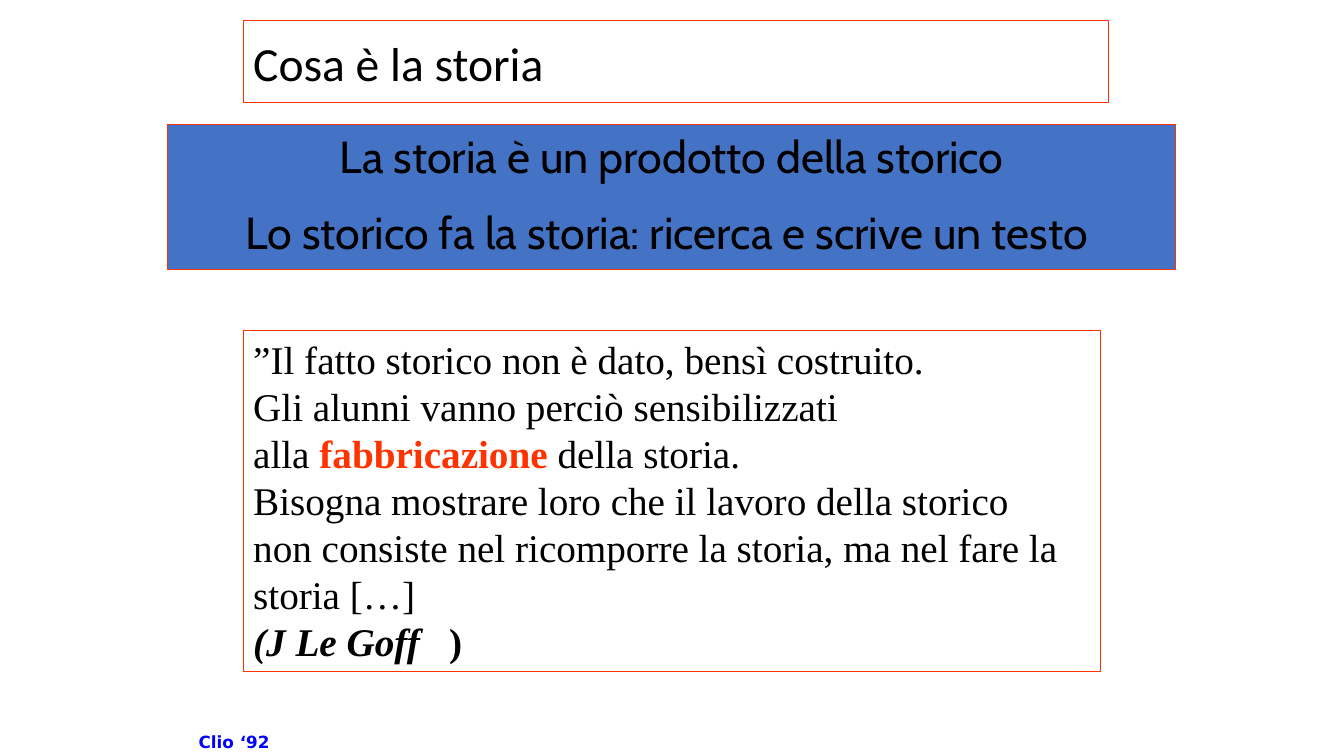
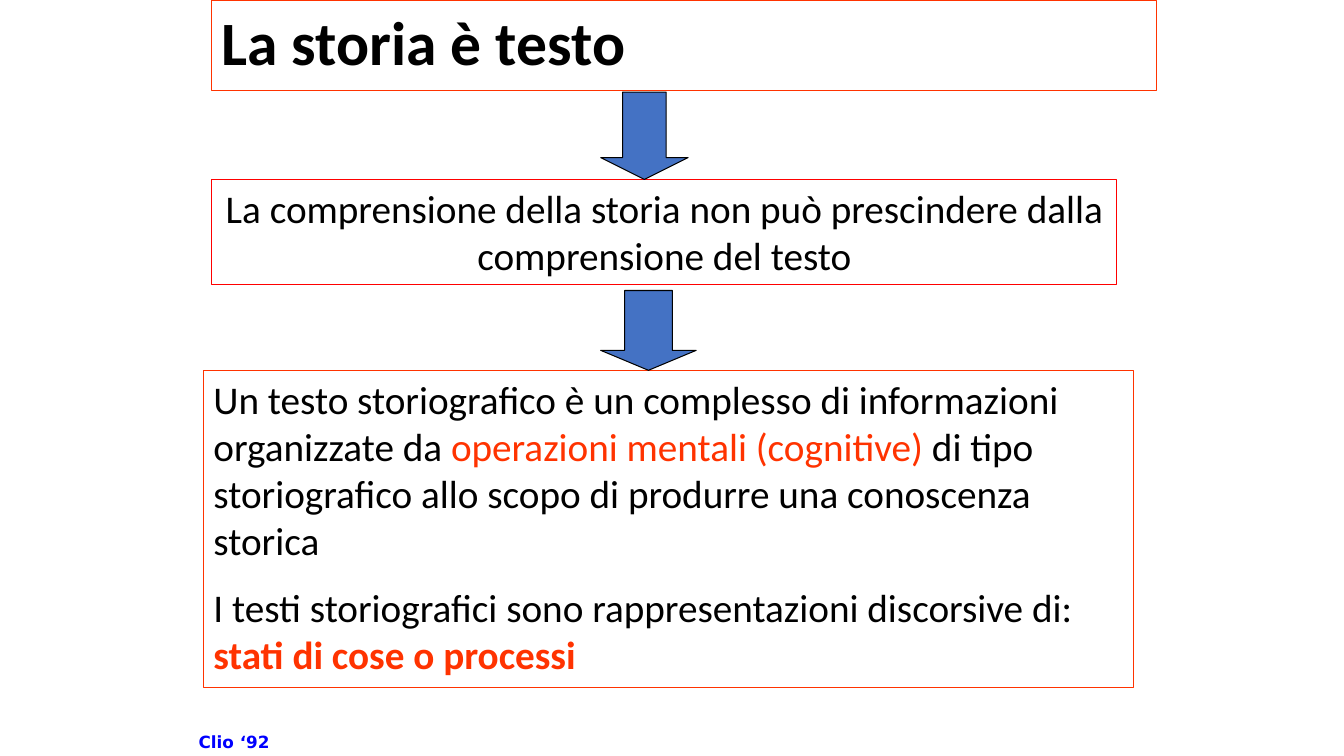
from dataclasses import dataclass
from typing import NamedTuple, Optional

import lxml.etree
import pptx
import pptx.dml.color
import pptx.enum.shapes
import pptx.enum.text
import pptx.oxml.ns
import pptx.util

Pt = pptx.util.Pt
Align = pptx.enum.text.PP_ALIGN
Anchor = pptx.enum.text.MSO_ANCHOR
Shapes = pptx.enum.shapes.MSO_SHAPE

COLORS = {
    "ink": "000000",
    "accent": "FF3300",
    "red": "FF0000",
    "blue": "4472C4",
    "footer": "0000FF",
}


class Frame(NamedTuple):
    left: float
    top: float
    width: float
    height: float


class Span(NamedTuple):
    text: str
    color: Optional[str] = None
    bold: Optional[bool] = None
    italic: bool = False
    size: Optional[float] = None


@dataclass(frozen=True)
class Panel:
    frame: Frame
    paragraphs: list[list[Span]]
    size: float = 28
    font: str = "Calibri"
    bold: bool = False
    align: Align = Align.LEFT
    anchor: Anchor = Anchor.TOP
    fill: Optional[str] = None
    line: str = "accent"
    line_spacing: Optional[float] = None
    tab_stop: Optional[float] = None


def rgb(name: str):
    return pptx.dml.color.RGBColor.from_string(COLORS[name])


def lengths(frame: Frame) -> list:
    return [Pt(value) for value in frame]


def add_span(para, span: Span, *, font: str, size: float, color: str, bold: bool) -> None:
    for number, line in enumerate(span.text.split("\n")):
        if number:
            para.add_line_break()
        if line:
            run = para.add_run()
            run.text = line
            run.font.name = font
            run.font.size = Pt(span.size or size)
            run.font.color.rgb = rgb(span.color or color)
            run.font.bold = bold if span.bold is None else span.bold
            run.font.italic = span.italic


def add_tab_stop(para, position: float) -> None:
    name = pptx.oxml.ns.qn
    properties = para._p.get_or_add_pPr()
    tabs = lxml.etree.SubElement(properties, name("a:tabLst"))
    lxml.etree.SubElement(tabs, name("a:tab"), pos=str(int(Pt(position))), algn="l")


def write_text(box, paragraphs: list[list[Span]], *, font: str, size: float,
               color: str = "ink", bold: bool = False, align=Align.LEFT,
               anchor=Anchor.TOP, line_spacing=None,
               tab_stop: Optional[float] = None) -> None:
    text = box.text_frame
    text.word_wrap = True
    text.vertical_anchor = anchor
    for number, spans in enumerate(paragraphs):
        para = text.add_paragraph() if number else text.paragraphs[0]
        if tab_stop is not None:
            add_tab_stop(para, tab_stop)
        para.alignment = align
        para.space_before = Pt(size / 2 if number else 0)
        if line_spacing is not None:
            para.line_spacing = line_spacing
        para.font.size = Pt(size)
        for span in spans:
            add_span(para, span, font=font, size=size, color=color, bold=bold)


def add_figure(page, kind, frame: Frame, *, fill: Optional[str], line: str):
    figure = page.shapes.add_shape(kind, *lengths(frame))
    figure.shadow.inherit = False
    if fill:
        figure.fill.solid()
        figure.fill.fore_color.rgb = rgb(fill)
    else:
        figure.fill.background()
    figure.line.color.rgb = rgb(line)
    figure.line.width = Pt(0.75)
    return figure


def add_panel(page, panel: Panel) -> None:
    box = add_figure(page, Shapes.RECTANGLE, panel.frame, fill=panel.fill, line=panel.line)
    write_text(box, panel.paragraphs, font=panel.font, size=panel.size, bold=panel.bold,
               align=panel.align, anchor=panel.anchor, line_spacing=panel.line_spacing,
               tab_stop=panel.tab_stop)


def title_panel(frame: Frame, spans: list[Span], *, size: float, bold: bool = False) -> Panel:
    return Panel(frame, [spans], size=size, bold=bold, anchor=Anchor.MIDDLE, line_spacing=0.9)


def add_footer(page) -> None:
    box = page.shapes.add_textbox(*lengths(Frame(135.4, 519.1, 80, 20.9)))
    text = box.text_frame
    text.margin_left = text.margin_right = Pt(6.5)
    text.margin_top = text.margin_bottom = Pt(3)
    write_text(box, [[Span("Clio ‘92")]], font="DejaVu Sans", size=12, color="footer",
               bold=True, anchor=Anchor.MIDDLE)


def add_page(deck, panels: list[Panel], arrows: list[Frame]) -> None:
    page = deck.slides.add_slide(deck.slide_layouts[6])
    for panel in panels:
        add_panel(page, panel)
    for frame in arrows:
        arrow = add_figure(page, Shapes.DOWN_ARROW, frame, fill="blue", line="ink")
        arrow.adjustments[0] = 0.5
        arrow.adjustments[1] = 0.25
    add_footer(page)


HISTORY_PANELS = [
    title_panel(Frame(173.8, 15, 617.8, 58.5),
                [Span("Cosa è la storia"), Span(" ", size=44)], size=34),
    Panel(
        Frame(173.8, 236.2, 612.4, 243.4),
        [[
            Span("”Il fatto storico non è dato, bensì costruito.\n"
                 "Gli alunni vanno perciò sensibilizzati\nalla "),
            Span("fabbricazione", color="accent", bold=True),
            Span(" della storia.\nBisogna mostrare loro che il lavoro della storico\n"
                 "non consiste nel ricomporre la storia, ma nel fare la storia […]\n"),
            Span("(J Le Goff", bold=True, italic=True),
            Span("\t)", bold=True),
        ]],
        font="Times New Roman", line_spacing=Pt(33.6), tab_stop=140,
    ),
    Panel(
        Frame(120, 88.6, 720, 103.7),
        [[Span("La storia è un prodotto della storico")],
         [Span("Lo storico fa la storia: ricerca e scrive un testo ")]],
        size=32, font="Cabin", align=Align.CENTER, fill="blue",
    ),
]

TEXT_PANELS = [
    Panel(
        Frame(145.4, 264.5, 664.6, 226.5),
        [[Span("Un testo storiografico è un complesso di informazioni organizzate da "),
          Span("operazioni mentali (cognitive)", color="accent"),
          Span(" di tipo storiografico allo scopo di produrre una conoscenza storica")],
         [Span("I testi storiografici sono rappresentazioni discorsive di: "),
          Span("stati di cose o processi", color="accent", bold=True)]],
    ),
    title_panel(Frame(151.2, 0.4, 675, 64.4), [Span("La storia è testo")], size=44, bold=True),
    Panel(
        Frame(151.2, 128.2, 646.6, 75.2),
        [[Span("La comprensione della storia non può prescindere dalla "
               "comprensione del testo")]],
        align=Align.CENTER, line="red",
    ),
]

TEXT_ARROWS = [Frame(429.1, 65.8, 62.4, 62.4), Frame(429.1, 207.5, 68.2, 57)]


def main() -> None:
    deck = pptx.Presentation()
    deck.slide_width = Pt(960)
    deck.slide_height = Pt(540)
    add_page(deck, HISTORY_PANELS, [])
    add_page(deck, TEXT_PANELS, TEXT_ARROWS)
    deck.save("out.pptx")


if __name__ == "__main__":
    main()
